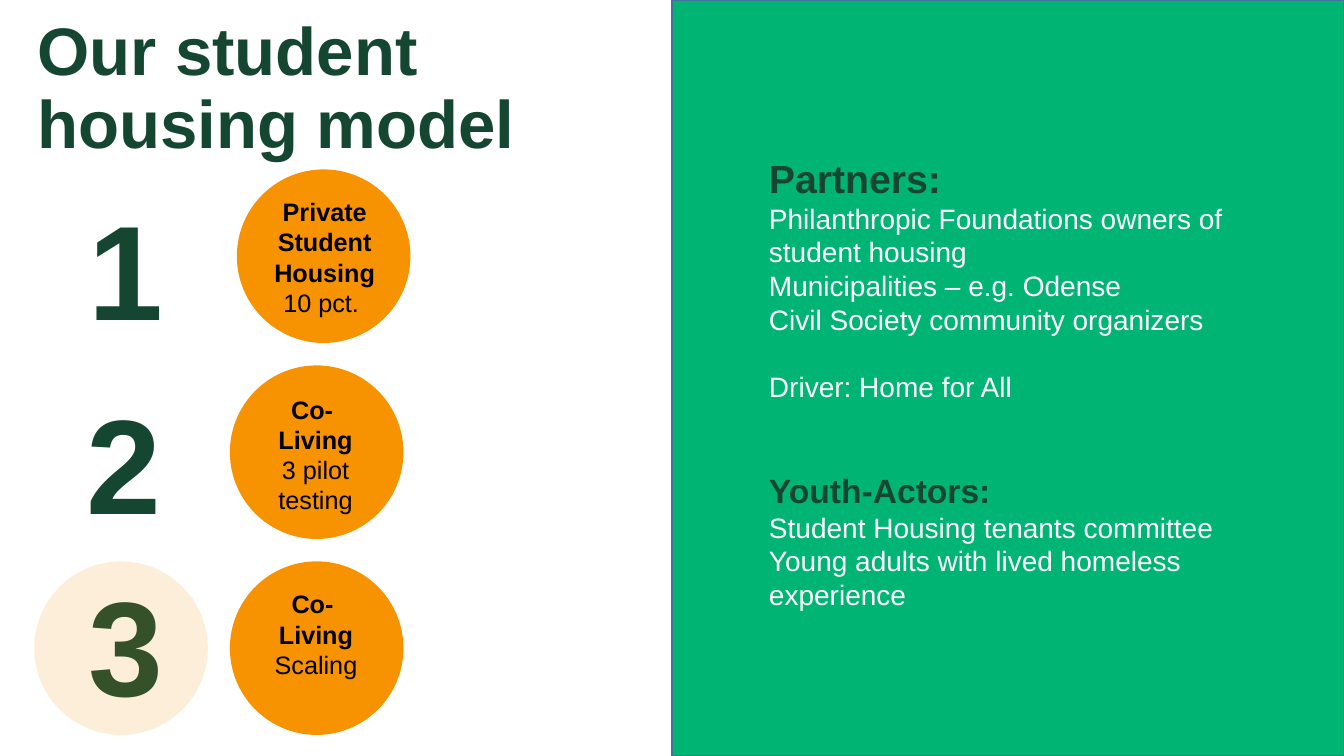
"""Build the student housing model slide."""
from dataclasses import dataclass

import lxml.etree
import pptx
import pptx.dml.color
import pptx.enum.shapes
import pptx.enum.text
import pptx.oxml.ns
import pptx.util

Pt = pptx.util.Pt
ALIGN = pptx.enum.text.PP_ALIGN
SHAPES = pptx.enum.shapes.MSO_SHAPE
FONT = "Arial"
COLORS = {
    "panel": "00B473",
    "panel_line": "43739E",
    "heading": "144632",
    "circle": "F79300",
    "label": "000000",
    "body": "FFFFFF",
}
CIRCLE_SIZE = 124
CIRCLE_TOP = 121
CIRCLE_PITCH = 140


@dataclass(frozen=True)
class Box:
    """Position and size in points."""
    left: float
    top: float
    width: float
    height: float

    def lengths(self) -> list:
        """Return the four lengths for a shape call."""
        return [Pt(value) for value in (self.left, self.top, self.width, self.height)]


@dataclass(frozen=True)
class Line:
    """One paragraph and its formatting."""
    text: str
    size: float
    color: str
    bold: bool = False
    space_before: float = 0


@dataclass(frozen=True)
class Step:
    """One numbered stage of the housing model."""
    number: str
    number_left: float
    number_top: float
    circle_left: float
    label_box: Box
    names: tuple[str, ...]
    details: tuple[str, ...]


@dataclass(frozen=True)
class Group:
    """A headed list on the green panel."""
    box: Box
    lines: tuple[Line, ...]


STEPS = (
    Step("1", 55.4, 142.6, 169.2, Box(185.8, 136.8, 92.2, 116.6),
         ("Private", "Student", "Housing"), ("10 pct. ",)),
    Step("2", 54, 280.8, 164.2, Box(139.7, 277.9, 171.4, 94.3),
         ("Co- ", "Living"), ("3 pilot", "testing")),
    Step("3", 55.4, 411.1, 164.2, Box(94.3, 416.9, 262.8, 72.7),
         ("Co- ", "Living"), ("Scaling",)),
)
GROUPS = (
    Group(Box(542.2, 106.6, 398.2, 186.5), (
        Line("Partners:", 28, "heading", True),
        Line("Philanthropic Foundations owners of student housing", 20, "body"),
        Line("Municipalities – e.g. Odense", 20, "body"),
        Line("Civil Society community organizers", 20, "body"),
        Line("Driver: Home for All", 20, "body", space_before=24),
    )),
    Group(Box(542.2, 332.2, 379.4, 132.2), (
        Line("Youth-Actors:", 24, "heading", True),
        Line("Student Housing tenants committee", 20, "body"),
        Line("Young adults with lived homeless experience", 20, "body"),
    )),
)


def rgb(name: str) -> pptx.dml.color.RGBColor:
    """Look up a named colour."""
    return pptx.dml.color.RGBColor.from_string(COLORS[name])


def write_lines(text_frame, lines, alignment, line_spacing: float = 1.0) -> None:
    """Fill a text frame with formatted paragraphs."""
    text_frame.text = "\n".join(line.text for line in lines)
    for paragraph, line in zip(text_frame.paragraphs, lines):
        paragraph.alignment = alignment
        paragraph.line_spacing = line_spacing
        paragraph.space_before = Pt(line.space_before)
        for run in paragraph.runs:
            run.font.name = FONT
            run.font.size = Pt(line.size)
            run.font.bold = line.bold
            run.font.color.rgb = rgb(line.color)


def add_text(slide, box: Box, lines, alignment, line_spacing: float = 1.0,
             wrap: bool = True) -> None:
    """Add a text box that grows with its text."""
    text_frame = slide.shapes.add_textbox(*box.lengths()).text_frame
    text_frame.word_wrap = wrap
    text_frame.auto_size = pptx.enum.text.MSO_AUTO_SIZE.SHAPE_TO_FIT_TEXT
    write_lines(text_frame, lines, alignment, line_spacing)


def add_filled(slide, kind, box: Box, color: str):
    """Add a flat shape without an outline."""
    shape = slide.shapes.add_shape(kind, *box.lengths())
    shape.shadow.inherit = False
    shape.fill.solid()
    shape.fill.fore_color.rgb = rgb(color)
    shape.line.fill.background()
    return shape


def add_circle(slide, left: float, index: int):
    """Add the circle of the given row."""
    top = CIRCLE_TOP + index * CIRCLE_PITCH
    box = Box(left, top, CIRCLE_SIZE, CIRCLE_SIZE)
    return add_filled(slide, SHAPES.OVAL, box, "circle")


def add_step(slide, step: Step, index: int) -> None:
    """Draw a step's circle, label and number."""
    add_circle(slide, step.circle_left, index)
    lines = [Line(name, 18, "label", True) for name in step.names]
    lines += [Line(detail, 18, "label") for detail in step.details]
    add_text(slide, step.label_box, lines, ALIGN.CENTER)
    number_box = Box(step.number_left, step.number_top, 68.4, 112.3)
    add_text(slide, number_box, [Line(step.number, 96, "heading", True)],
             ALIGN.CENTER, 0.9, wrap=False)


def set_opacity(shape, percent: int) -> None:
    """Make a solid fill translucent."""
    color = shape.fill._xPr.find(".//" + pptx.oxml.ns.qn("a:srgbClr"))
    alpha = lxml.etree.SubElement(color, pptx.oxml.ns.qn("a:alpha"))
    alpha.set("val", str(percent * 1000))


def add_title(slide) -> None:
    """Place and format the slide title."""
    title = slide.shapes.title
    title.left, title.top, title.width, title.height = Box(19.4, 15.1, 445.7, 98.6).lengths()
    title.text_frame.word_wrap = True
    title.text_frame.auto_size = pptx.enum.text.MSO_AUTO_SIZE.NONE
    title.text_frame.vertical_anchor = pptx.enum.text.MSO_ANCHOR.MIDDLE
    write_lines(title.text_frame, [Line("Our student housing model", 48, "heading", True)],
                ALIGN.LEFT, 0.9)


def main() -> None:
    """Create and save the presentation."""
    presentation = pptx.Presentation()
    presentation.slide_width, presentation.slide_height = Pt(960), Pt(540)
    slide = presentation.slides.add_slide(presentation.slide_layouts[5])
    add_title(slide)
    panel = add_filled(slide, SHAPES.RECTANGLE, Box(480, 0, 480, 540), "panel")
    panel.line.color.rgb = rgb("panel_line")
    panel.line.width = Pt(1)
    for group in GROUPS:
        add_text(slide, group.box, group.lines, ALIGN.LEFT)
    for index, step in enumerate(STEPS):
        add_step(slide, step, index)
    highlight = add_circle(slide, 24.5, len(STEPS) - 1)
    set_opacity(highlight, 15)
    presentation.save("out.pptx")


if __name__ == "__main__":
    main()
